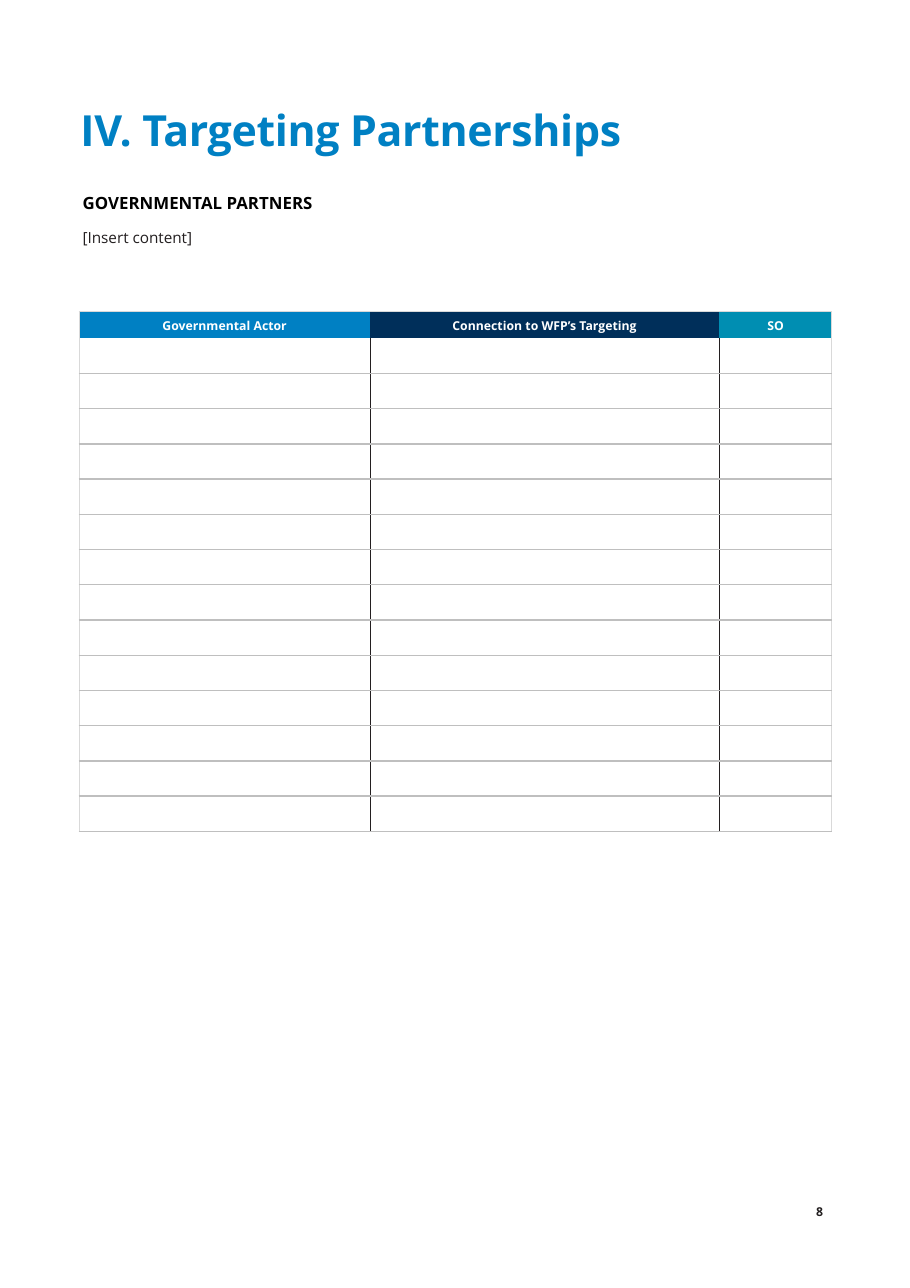
from lxml import etree
from pptx import Presentation, util as u
from pptx.dml.color import RGBColor
from pptx.enum import text
from pptx.oxml import ns

FONT = "Open Sans"
BLUE, NAVY, TEAL = "0080C3", "002F5A", "008EB2"
INK, GREY, PALE = "231F20", "BFBFBF", "D9D9D9"
LEFT, WIDTH = 0.72, 6.82


def paint(fmt, hex_color):
    fmt.rgb = RGBColor.from_string(hex_color)


def add_run(p, words, size, color, bold=True, spacing=0):
    r = p.add_run()
    r.text = words
    for name, value in dict(name=FONT, size=u.Pt(size), bold=bold).items():
        setattr(r.font, name, value)
    paint(r.font.color, color)
    if spacing:
        r._r.get_or_add_rPr().set("spc", str(spacing))


prs = Presentation()
prs.slide_width, prs.slide_height = u.Inches(8.26), u.Inches(11.69)
s = prs.slides.add_slide(prs.slide_layouts[6])

# Page number, title and introduction: box, left inset, runs
blocks = [
    ((7.31, 10.92, 0.22, 0.18), 0.1, [("8", 8, INK, True, -50)]),
    ((LEFT, 0.93, 5.71, 0.49), 0.01,
     [("IV. Targeting Partnerships", 28, BLUE, True, -20)]),
    ((LEFT, 1.69, WIDTH, 0.54), 0.03,
     [("GOVERNMENTAL PARTNERS", 11, "000000"),
      ("[Insert content]", 10, INK, False)]),
]
for box, inset, lines in blocks:
    tf = s.shapes.add_textbox(*map(u.Inches, box)).text_frame
    margins = dict(margin_left=inset, margin_top=0.01, margin_right=0, margin_bottom=0)
    for name, value in margins.items():
        setattr(tf, name, u.Inches(value))
    tf.word_wrap = True
    for i, line in enumerate(lines):
        p = tf.add_paragraph() if i else tf.paragraphs[0]
        add_run(p, *line)
        if len(lines) > 1:
            p.alignment = text.PP_ALIGN.JUSTIFY
            p.line_spacing = 1.25
            p.space_before, p.space_after = u.Pt(1 if i else 0), u.Pt(6)

# Partner table: one header row over equal empty rows
headers = [("Governmental Actor", BLUE, 2.64),
           ("Connection to WFP’s Targeting", NAVY, 3.17),
           ("SO", TEAL, 1.02)]
BODY_ROWS, HEAD_H, ROW_H = 14, 0.24, 0.32
frame = s.shapes.add_table(BODY_ROWS + 1, len(headers), *map(
    u.Inches, (LEFT, 2.83, WIDTH, HEAD_H + BODY_ROWS * ROW_H)))
table = frame.table
table.first_row = table.horz_banding = False
for row in table.rows:
    row.height = u.Inches(ROW_H)
table.rows[0].height = u.Inches(HEAD_H)

for c, (label, color, width) in enumerate(headers):
    table.columns[c].width = u.Inches(width)
    for r in range(BODY_ROWS + 1):
        cell = table.cell(r, c)
        for side in ("left", "top", "right", "bottom"):
            setattr(cell, f"margin_{side}", u.Inches(0.05))
        p = cell.text_frame.paragraphs[0]
        if r == 0:
            cell.fill.solid()
            paint(cell.fill.fore_color, color)
            cell.vertical_anchor = text.MSO_ANCHOR.BOTTOM
            p.alignment = text.PP_ALIGN.CENTER
            add_run(p, label, 8, "FFFFFF")
        else:
            cell.fill.background()
            etree.SubElement(p._p, ns.qn("a:endParaRPr")).set("sz", "800")

        # Cell borders: pale outside, dark between columns, grey between rows
        outer, inner = (PALE, 1), (INK, 0.5) if r else None
        borders = {
            "lnL": inner if c else outer,
            "lnR": inner if c < len(headers) - 1 else outer,
            "lnT": (GREY, 1) if r > 1 else None if r else outer,
            "lnB": (GREY, 1) if r else None,
        }
        for i, (tag, border) in enumerate(borders.items()):
            ln = etree.Element(ns.qn(f"a:{tag}"))
            if border:
                ln.set("w", str(u.Pt(border[1])))
                fill = etree.SubElement(ln, ns.qn("a:solidFill"))
                etree.SubElement(fill, ns.qn("a:srgbClr")).set("val", border[0])
            else:
                etree.SubElement(ln, ns.qn("a:noFill"))
            cell._tc.get_or_add_tcPr().insert(i, ln)

prs.save("out.pptx")
